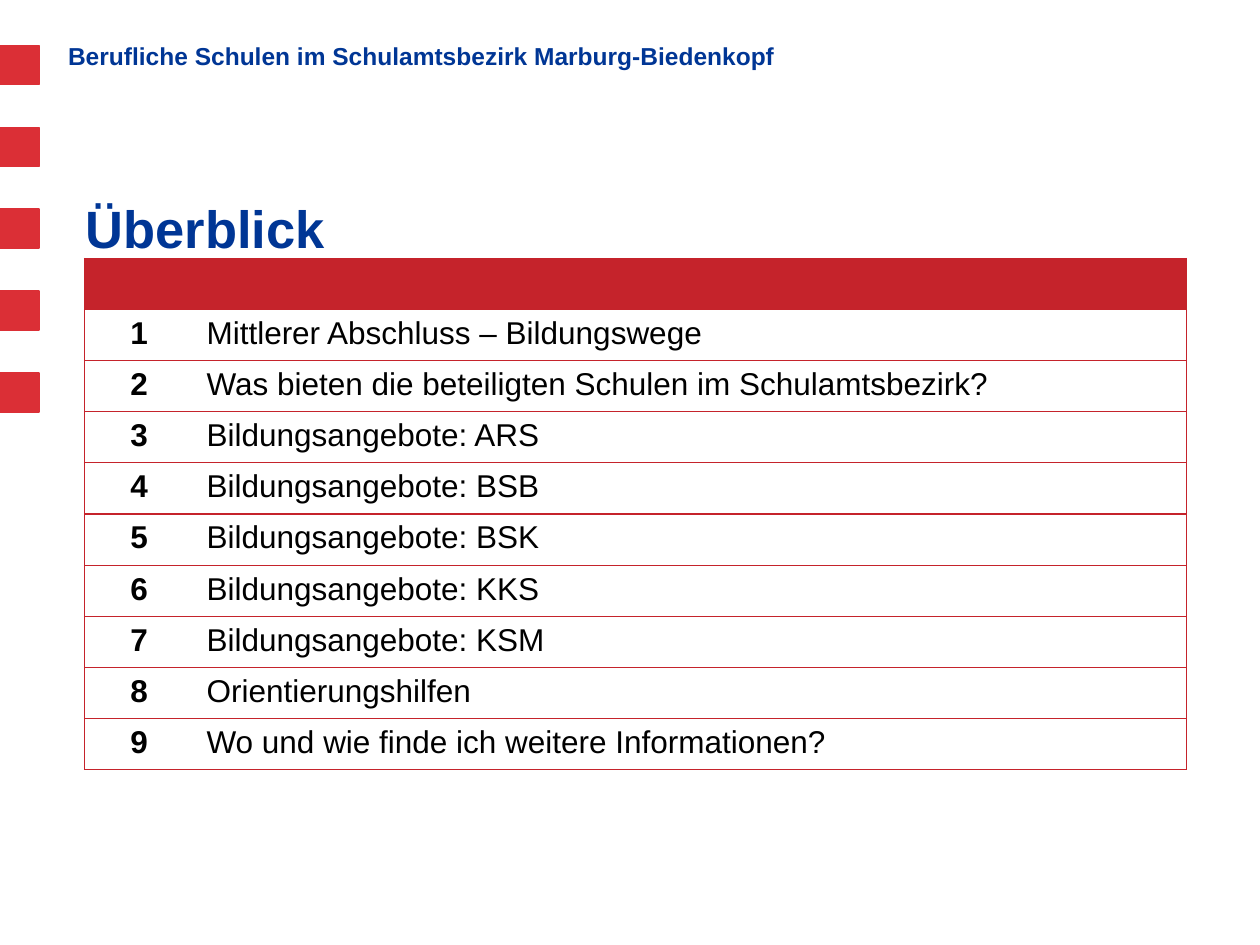
"""Build the overview slide with its numbered table of topics."""
from lxml import etree
from pptx import Presentation
from pptx.dml.color import RGBColor
from pptx.enum import shapes, text
from pptx.oxml import ns
from pptx.util import Inches, Pt

BLUE = RGBColor(0x00, 0x36, 0x95)
BLACK = RGBColor(0x00, 0x00, 0x00)
BRIGHT_RED = RGBColor(0xDB, 0x2F, 0x36)
TABLE_RED = RGBColor(0xC5, 0x23, 0x2B)
NO_STYLE = "{2D5ABB26-0587-4C30-8999-92F81FD0307C}"
TOPICS = [
    "Mittlerer Abschluss – Bildungswege",
    "Was bieten die beteiligten Schulen im Schulamtsbezirk?",
    "Bildungsangebote: ARS",
    "Bildungsangebote: BSB",
    "Bildungsangebote: BSK",
    "Bildungsangebote: KKS",
    "Bildungsangebote: KSM",
    "Orientierungshilfen",
    "Wo und wie finde ich weitere Informationen?",
]


def write(tf, words, size, color, bold, align=text.PP_ALIGN.LEFT):
    p = tf.paragraphs[0]
    p.alignment = align
    r = p.add_run()
    r.text = words
    r.font.color.rgb = color
    for name, value in {"name": "Arial", "size": Pt(size), "bold": bold}.items():
        setattr(r.font, name, value)
    return p


def add_borders(cell, sides):
    tcPr = cell._tc.get_or_add_tcPr()
    for i, side in enumerate(sides):
        ln = etree.Element(ns.qn(f"a:ln{side}"), w=str(Pt(0.75)))
        fill = etree.SubElement(ln, ns.qn("a:solidFill"))
        etree.SubElement(fill, ns.qn("a:srgbClr"), val=str(TABLE_RED))
        tcPr.insert(i, ln)


prs = Presentation()
prs.slide_width, prs.slide_height = Inches(10), Inches(7.5)
s = prs.slides.add_slide(prs.slide_layouts[5])

for i in range(5):
    sp = s.shapes.add_shape(shapes.MSO_SHAPE.RECTANGLE, Inches(0),
                            Inches(0.36 + 0.65 * i), Inches(0.31), Inches(0.31))
    sp.shadow.inherit = False
    sp.fill.solid()
    sp.fill.fore_color.rgb = BRIGHT_RED
    sp.line.color.rgb = BRIGHT_RED
    sp.line.width = Pt(0.75)

header = s.shapes.add_textbox(Inches(0.54), Inches(0.3), Inches(8.03), Inches(0.31))
tf = header.text_frame
for name, value in {"word_wrap": True, "margin_left": 0, "margin_right": 0,
                    "auto_size": text.MSO_AUTO_SIZE.SHAPE_TO_FIT_TEXT}.items():
    setattr(tf, name, value)
p = write(tf, "Berufliche Schulen im Schulamtsbezirk Marburg-Biedenkopf", 14, BLUE, True)
p.line_spacing = 0.9

title = s.shapes.title
for name, value in {"left": 0.58, "top": 0.98, "width": 9.22, "height": 1.08}.items():
    setattr(title, name, Inches(value))
tf = title.text_frame
for name, value in {"vertical_anchor": text.MSO_ANCHOR.BOTTOM, "margin_top": 0,
                    "margin_bottom": 0, "auto_size": text.MSO_AUTO_SIZE.NONE}.items():
    setattr(tf, name, value)
write(tf, "Überblick", 30, BLUE, True)

frame = s.shapes.add_table(len(TOPICS) + 1, 2, Inches(0.67), Inches(2.05),
                           Inches(8.75), Inches(4.06))
table = frame.table
table._tbl.tblPr.find(ns.qn("a:tableStyleId")).text = NO_STYLE
table.first_row = table.horz_banding = False
for column, width in zip(table.columns, (0.87, 7.88)):
    column.width = Inches(width)

for cell, sides in zip(table.rows[0].cells, ("LTB", "RTB")):
    cell.fill.solid()
    cell.fill.fore_color.rgb = TABLE_RED
    add_borders(cell, sides)

for i, topic in enumerate(TOPICS, start=1):
    number, label = table.rows[i].cells
    write(number.text_frame, str(i), 18, BLACK, True, text.PP_ALIGN.CENTER)
    write(label.text_frame, topic, 18, BLACK, False)
    for cell, sides in ((number, "LTB"), (label, "RTB")):
        cell.fill.background()
        add_borders(cell, sides)

prs.save("out.pptx")
